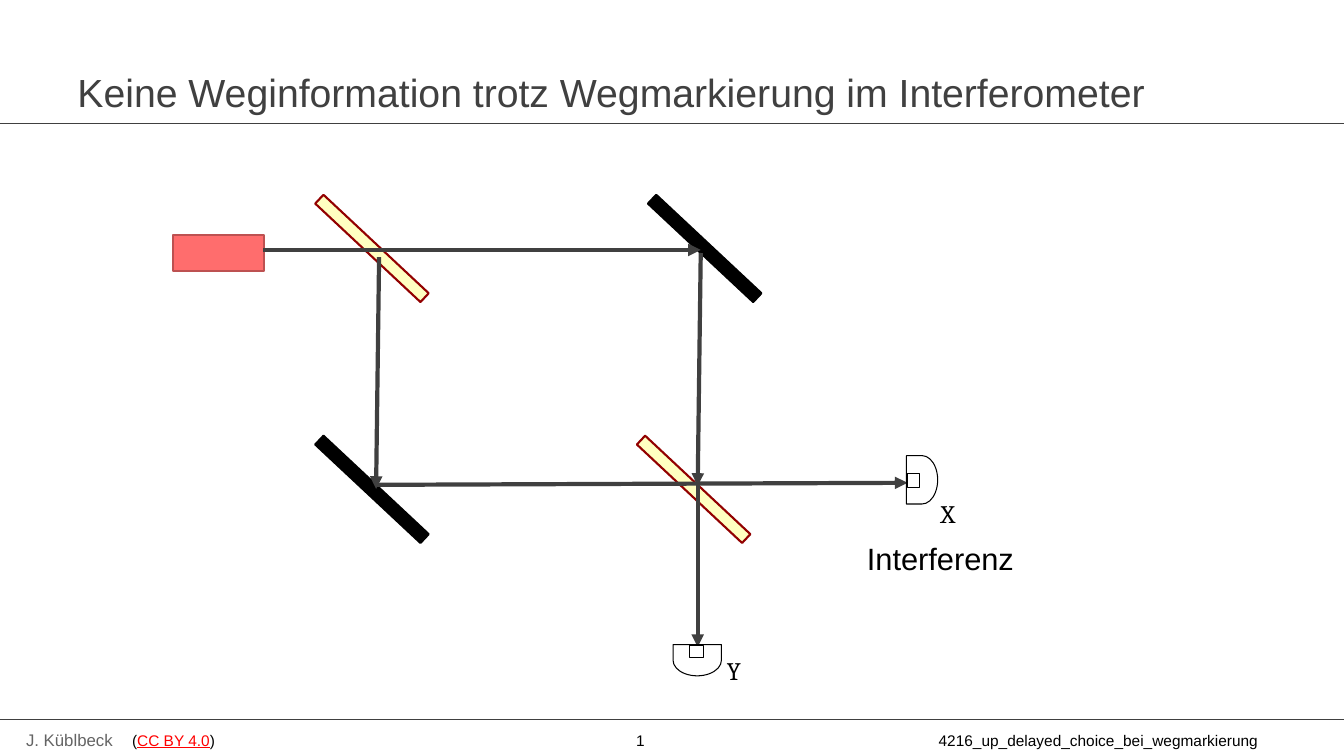
from dataclasses import dataclass

from lxml import etree
from pptx import Presentation
from pptx.dml.color import RGBColor
from pptx.enum.shapes import MSO_CONNECTOR, MSO_SHAPE
from pptx.enum.text import MSO_ANCHOR
from pptx.oxml.ns import qn
from pptx.util import Inches, Pt

STRAIGHT = MSO_CONNECTOR.STRAIGHT
RECTANGLE = MSO_SHAPE.RECTANGLE
DELAY = MSO_SHAPE.FLOWCHART_DELAY
MIDDLE = MSO_ANCHOR.MIDDLE
TOP = MSO_ANCHOR.TOP


@dataclass(frozen=True)
class Theme:
    sans: str = "Arial"
    serif: str = "Cambria"
    dark: str = "404040"
    black: str = "000000"
    white: str = "FFFFFF"
    grey: str = "646464"
    red: str = "FF0000"
    laser: str = "FF6D6D"
    laser_edge: str = "BD5151"
    splitter: str = "FFFFC1"
    splitter_edge: str = "920000"
    title_size: int = 28
    body_size: int = 22
    label_size: int = 18
    author_size: int = 12
    footer_size: int = 11
    thin: float = 0.75
    edge: float = 1.5
    beam: float = 3


class SlideBuilder:
    def __init__(self, deck, theme):
        self.theme = theme
        self.page = deck.slides.add_slide(deck.slide_layouts[6])

    def text(self, place, spans, size, font=None, anchor=TOP, inset=(0.1, 0.05), wrap=True):
        box = self.page.shapes.add_textbox(*map(Inches, place))
        frame = box.text_frame
        across, down = map(Inches, inset)
        frame_format = {
            "word_wrap": wrap, "vertical_anchor": anchor,
            "margin_left": across, "margin_right": across,
            "margin_top": down, "margin_bottom": down,
        }
        for name, value in frame_format.items():
            setattr(frame, name, value)
        para = frame.paragraphs[0]
        for words, color, underline in spans:
            span = para.add_run()
            span.text = words
            span_format = {"name": font or self.theme.sans, "size": Pt(size), "underline": underline}
            for name, value in span_format.items():
                setattr(span.font, name, value)
            span.font.color.rgb = RGBColor.from_string(color)

    def shape(self, kind, place, fill, edge, width, rotation=0):
        shape = self.page.shapes.add_shape(kind, *map(Inches, place))
        shape.rotation = rotation
        shape.shadow.inherit = False
        shape.fill.solid()
        shape.fill.fore_color.rgb = RGBColor.from_string(fill)
        shape.line.color.rgb = RGBColor.from_string(edge)
        shape.line.width = Pt(width)

    def line(self, ends, width, arrow=False):
        connector = self.page.shapes.add_connector(STRAIGHT, *map(Inches, ends))
        connector.line.color.rgb = RGBColor.from_string(self.theme.dark)
        connector.line.width = Pt(width)
        if arrow:
            etree.SubElement(connector.line._get_or_add_ln(), qn("a:tailEnd"), type="triangle")
        etree.SubElement(connector._element.spPr, qn("a:effectLst"))

    def plate(self, left, top, fill, edge):
        self.shape(RECTANGLE, (left, top, 0.12, 1.43), fill, edge, self.theme.edge, 313.1)

    def detector(self, body, window, rotation):
        for kind, place in ((DELAY, (*body, 0.31, 0.48)), (RECTANGLE, (*window, 0.12, 0.14))):
            self.shape(kind, place, self.theme.white, self.theme.black, self.theme.thin, rotation)


def main():
    theme = Theme()
    deck = Presentation()
    deck.slide_width = Inches(13.33)
    deck.slide_height = Inches(7.5)
    slide = SlideBuilder(deck, theme)

    slide.text((0.16, 7.19, 1.15, 0.3), [("J. Küblbeck", theme.grey, False)],
               theme.author_size, wrap=False)
    licence = [("(", theme.black, False), ("CC BY 4.0", theme.red, True), (")", theme.black, False)]
    page_number = [("1", theme.black, False)]
    file_name = [("4216_up_delayed_choice_bei_wegmarkierung", theme.black, False)]
    for left, width, spans in ((1.31, 1.2, licence), (6.31, 0.4, page_number), (9.31, 3.73, file_name)):
        slide.text((left, 7.25, width, 0.19), spans, theme.footer_size, inset=(0, 0))
    for height in (1.23, 7.14):
        slide.line((0, height, 13.33, height), theme.thin)

    slide.text((0.67, 0.6, 12, 0.63),
               [("Keine Weginformation trotz Wegmarkierung im Interferometer", theme.dark, False)],
               theme.title_size, anchor=MIDDLE)

    slide.shape(RECTANGLE, (1.72, 2.33, 0.9, 0.36), theme.laser, theme.laser_edge, theme.edge)
    for left, top in ((3.63, 1.75), (6.82, 4.14)):
        slide.plate(left, top, theme.splitter, theme.splitter_edge)
    for left, top in ((6.93, 1.75), (3.63, 4.14)):
        slide.plate(left, top, theme.black, theme.black)

    beams = (
        (2.61, 2.48, 6.95, 2.48),
        (3.73, 4.81, 9, 4.79),
        (6.95, 2.51, 6.92, 4.82),
        (3.76, 2.55, 3.73, 4.85),
        (6.92, 4.81, 6.92, 6.42),
    )
    for ends in beams:
        slide.line(ends, theme.beam, arrow=True)

    slide.detector((8.99, 4.52), (9, 4.7), 0)
    slide.detector((6.76, 6.31), (6.85, 6.39), 90)
    for name, left, top in (("X", 9.23, 4.89), ("Y", 7.11, 6.45)):
        slide.text((left, top, 0.38, 0.4), [(name, theme.black, False)],
                   theme.label_size, theme.serif, wrap=False)
    slide.text((8.5, 5.31, 4.39, 0.64), [("Interferenz", theme.black, False)], theme.body_size)

    deck.save("out.pptx")


if __name__ == "__main__":
    main()
